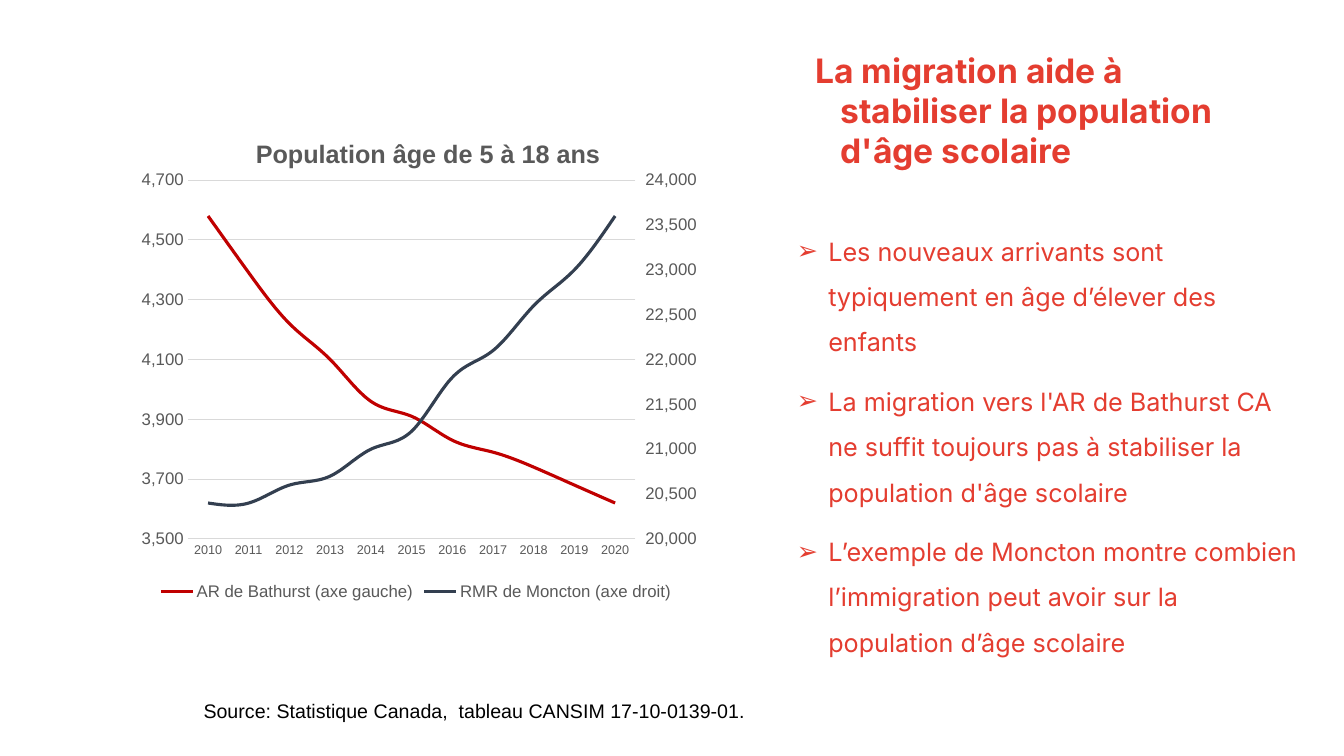
"""Build a slide on migration and the school-age population."""
import copy

import lxml.etree
import pptx
import pptx.chart.data
import pptx.dml.color
import pptx.enum.chart
import pptx.enum.text
import pptx.oxml.ns
import pptx.util

Cm, Pt = pptx.util.Cm, pptx.util.Pt
RGB = pptx.dml.color.RGBColor.from_string
qn = pptx.oxml.ns.qn


class Theme:
    red, ink, grey, grid = "E43D30", "000000", "595959", "D9D9D9"
    lines = ("C00000", "333F50")
    sans, plain = "Inter", "Arial"
    head, body, note, label, year = 24, 18, 14, 12, 9


def style(font, size, color, face, bold=False):
    font.size, font.name, font.bold = Pt(size), face, bold
    font.color.rgb = RGB(color)


def place(part, index, **values):
    layout = part.find(qn("c:layout"))
    if layout is None:
        layout = part.makeelement(qn("c:layout"))
        part.insert(index, layout)
    manual = lxml.etree.SubElement(layout, qn("c:manualLayout"))
    for tag, value in values.items():
        lxml.etree.SubElement(manual, qn("c:" + tag)).set("val", str(value))


deck = pptx.Presentation()
deck.slide_width, deck.slide_height = Cm(33.87), Cm(19.05)
slide = deck.slides.add_slide(deck.slide_layouts[1])

title, body = slide.placeholders
note = slide.shapes.add_textbox(Cm(4.88), Cm(17.48), Cm(23.77), Cm(0.86))
title.left, title.top, title.width, title.height = Cm(19.66), Cm(1.12), Cm(12.93), Cm(2.44)
body.left, body.top, body.width, body.height = Cm(19.2), Cm(5.44), Cm(13.84), Cm(11.66)
for box in (title, body, note):
    frame = box.text_frame
    frame.word_wrap = True
    frame.auto_size = pptx.enum.text.MSO_AUTO_SIZE.NONE
    frame.vertical_anchor = pptx.enum.text.MSO_ANCHOR.TOP

para = title.text_frame.paragraphs[0]
para.alignment = pptx.enum.text.PP_ALIGN.LEFT
props = para._p.get_or_add_pPr()
props.set("marL", str(Cm(1.27)))
props.set("indent", str(Cm(-0.64)))
run = para.add_run()
run.text = "La migration aide à stabiliser la population d'âge scolaire"
style(run.font, Theme.head, Theme.red, Theme.sans, True)

points = (
    "Les nouveaux arrivants sont typiquement en âge d’élever des enfants",
    "La migration vers l'AR de Bathurst CA ne suffit toujours pas à stabiliser la population d'âge scolaire",
    "L’exemple de Moncton montre combien l’immigration peut avoir sur la population d’âge scolaire",
)
for order, point in enumerate(points):
    para = body.text_frame.add_paragraph() if order else body.text_frame.paragraphs[0]
    props = para._p.get_or_add_pPr()
    props.set("marL", str(Cm(1.42)))
    props.set("indent", str(Cm(-0.79)))
    tint = lxml.etree.SubElement(props, qn("a:buClr"))
    lxml.etree.SubElement(tint, qn("a:srgbClr")).set("val", Theme.red)
    lxml.etree.SubElement(props, qn("a:buChar")).set("char", "➢")
    para.line_spacing = 1.5
    para.space_before = Pt(10 if order else 0)
    run = para.add_run()
    run.text = point
    style(run.font, Theme.body, Theme.red, Theme.sans)

run = note.text_frame.paragraphs[0].add_run()
run.text = "Source: Statistique Canada,  tableau CANSIM 17-10-0139-01."
style(run.font, Theme.note, Theme.ink, Theme.plain)

data = pptx.chart.data.CategoryChartData(number_format="#,##0")
data.categories = [str(year) for year in range(2010, 2021)]
data.add_series("AR de Bathurst (axe gauche)",
                (4580, 4390, 4220, 4100, 3960, 3910, 3830, 3790, 3740, 3680, 3620))
data.add_series("RMR de Moncton (axe droit)",
                (20400, 20400, 20600, 20700, 21000, 21200, 21800, 22100, 22600, 23000, 23600))
chart = slide.shapes.add_chart(pptx.enum.chart.XL_CHART_TYPE.LINE, Cm(3.07), Cm(2.97),
                               Cm(14.83), Cm(12.27), data).chart
style(chart.font, Theme.label, Theme.grey, Theme.plain)

chart.has_title = True
run = chart.chart_title.text_frame.paragraphs[0].add_run()
run.text = "Population âge de 5 à 18 ans"
style(run.font, Theme.body, Theme.grey, Theme.plain, True)

chart.has_legend = True
chart.legend.position = pptx.enum.chart.XL_LEGEND_POSITION.BOTTOM
chart.legend.include_in_layout = False
style(chart.legend.font, Theme.label, Theme.grey, Theme.plain)

for line, color in zip(chart.plots[0].series, Theme.lines):
    line.smooth = True
    line.format.line.width = Pt(2.25)
    line.format.line.color.rgb = RGB(color)

years, left = chart.category_axis, chart.value_axis
for axis, size in ((years, Theme.year), (left, Theme.label)):
    axis.major_tick_mark = pptx.enum.chart.XL_TICK_MARK.NONE
    axis.minor_tick_mark = pptx.enum.chart.XL_TICK_MARK.NONE
    style(axis.tick_labels.font, size, Theme.grey, Theme.plain)
left.minimum_scale, left.maximum_scale, left.major_unit = 3500, 4700, 200
left.tick_labels.number_format = "#,##0"
left.tick_labels.number_format_is_linked = False
left.format.line.fill.background()
for line in (years.format.line, left.major_gridlines.format.line):
    line.width = Pt(0.75)
    line.color.rgb = RGB(Theme.grid)

plot = chart._chartSpace.find(".//" + qn("c:plotArea"))
first = plot.find(qn("c:lineChart"))
second = copy.deepcopy(first)
first.remove(first.findall(qn("c:ser"))[1])
second.remove(second.find(qn("c:ser")))
first.addnext(second)
for ref, key in zip(second.findall(qn("c:axId")), ("5001", "5002")):
    ref.set("val", key)

right = copy.deepcopy(left._element)
hidden = copy.deepcopy(years._element)
right.remove(right.find(qn("c:majorGridlines")))
left._element.addnext(right)
right.addnext(hidden)
changes = (
    (right, {"axId": "5002", "crossAx": "5001", "axPos": "r", "crosses": "max",
             "majorTickMark": "out", "majorUnit": "500",
             "scaling/c:min": "20000", "scaling/c:max": "24000"}),
    (hidden, {"axId": "5001", "crossAx": "5002", "delete": "1"}),
)
for axis, values in changes:
    for tag, value in values.items():
        axis.find("c:" + tag, {"c": pptx.oxml.ns.nsuri("c")}).set("val", value)

place(plot, 0, layoutTarget="inner", xMode="edge", yMode="edge",
      x=0.112, y=0.128, w=0.761, h=0.737)
place(chart.chart_title._element, 1, xMode="edge", yMode="edge", x=0.22, y=0.03)

deck.save("out.pptx")
